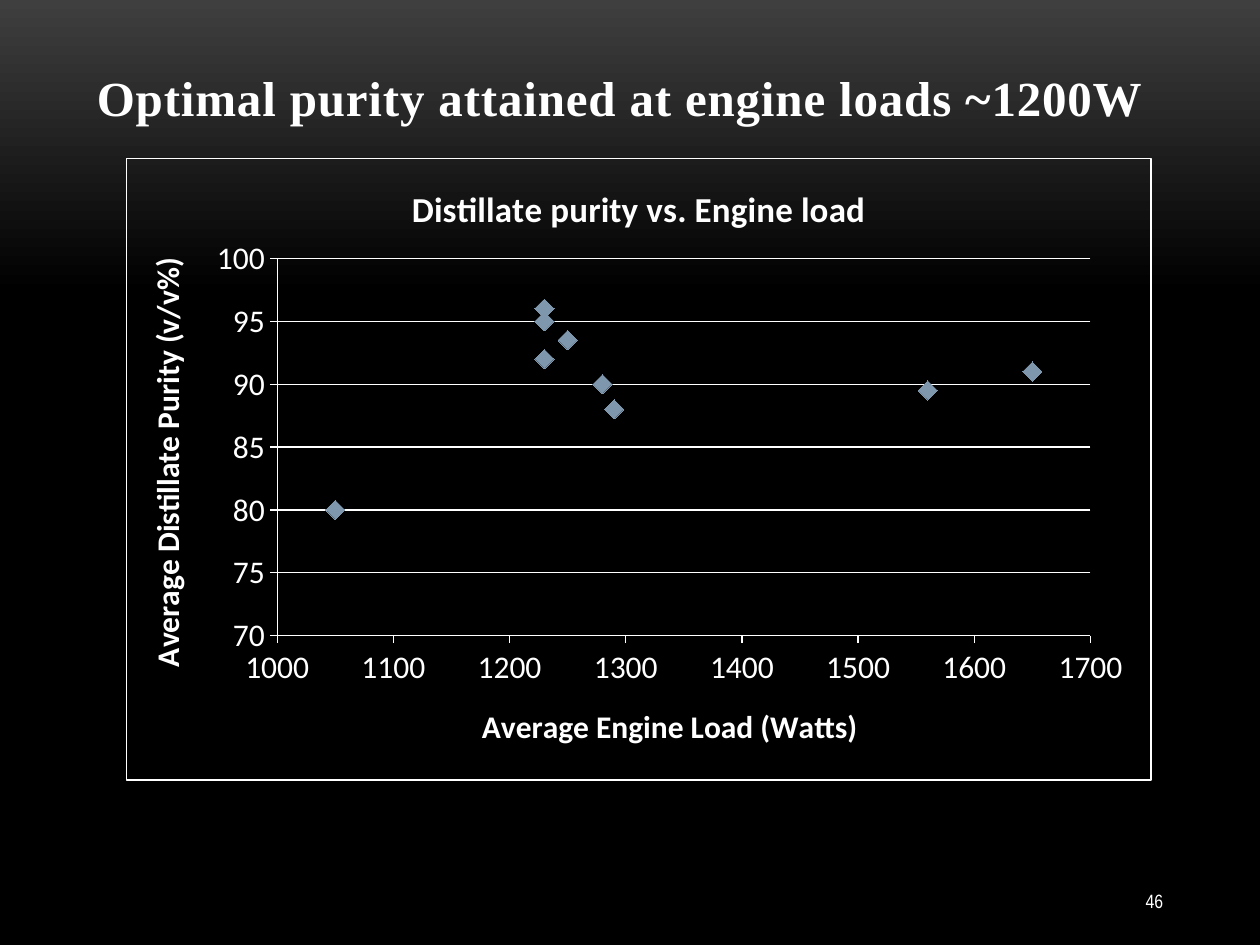
from dataclasses import dataclass

from lxml import etree
from pptx import Presentation
from pptx.chart.data import XyChartData
from pptx.dml.color import RGBColor
from pptx.enum.chart import XL_CHART_TYPE, XL_MARKER_STYLE, XL_TICK_MARK
from pptx.enum.text import MSO_ANCHOR, PP_ALIGN
from pptx.oxml import parse_xml
from pptx.oxml.ns import nsdecls, qn
from pptx.util import Inches, Pt

SCATTER = XL_CHART_TYPE.XY_SCATTER
DIAMOND = XL_MARKER_STYLE.DIAMOND
OUT, NONE = XL_TICK_MARK.OUTSIDE, XL_TICK_MARK.NONE
LEFT, RIGHT = PP_ALIGN.LEFT, PP_ALIGN.RIGHT
MIDDLE, BOTTOM = MSO_ANCHOR.MIDDLE, MSO_ANCHOR.BOTTOM

WIDE, HIGH = Inches(10), Inches(7.5)


@dataclass(frozen=True)
class Theme:
    text: str = "FFFFFF"
    glow: str = "3F3F3F"
    base: str = "000000"
    mark: str = "7E97AD"
    head_font: str = "Times New Roman"
    page_font: str = "Arial Narrow"
    plot_font: str = "Calibri"
    head: int = 28
    title: int = 20
    label: int = 18
    page: int = 11
    marker: int = 11
    line: float = 0.75


THEME = Theme()
POINTS = [(1560, 89.5), (1650, 91), (1250, 93.5), (1050, 80), (1290, 88),
          (1230, 96), (1230, 92), (1280, 90), (1230, 95)]


def rgb(code):
    return RGBColor.from_string(code)


def place(x, y, w, h):
    """Turn shares of the slide's size into lengths."""
    return int(x * WIDE), int(y * HIGH), int(w * WIDE), int(h * HIGH)


def style(font, name, size, bold=False):
    font.name, font.size, font.bold = name, Pt(size), bold
    font.color.rgb = rgb(THEME.text)


def add_back(slide):
    fill = slide.background.fill
    fill.gradient()
    fill.gradient_angle = 270
    shades = ((0, THEME.glow), (0.31, THEME.base))
    for stop, (share, code) in zip(fill.gradient_stops, shades):
        stop.position = share
        stop.color.rgb = rgb(code)


def add_text(slide, box, text, name, size, align, anchor, bold=False):
    frame = slide.shapes.add_textbox(*place(*box)).text_frame
    frame.word_wrap = True
    frame.vertical_anchor = anchor
    para = frame.paragraphs[0]
    para.text = text
    para.alignment = align
    style(para.font, name, size, bold)
    return para


def space_out(para, points):
    """Widen the gaps between letters."""
    for run in para.runs:
        run.font._element.set("spc", str(int(points * 100)))


def set_line(line):
    line.color.rgb = rgb(THEME.text)
    line.width = Pt(THEME.line)


def set_title(owner, text, size):
    frame = (owner.chart_title if hasattr(owner, "chart_title")
             else owner.axis_title).text_frame
    frame.text = text
    style(frame.paragraphs[0].font, THEME.plot_font, size, True)
    return frame


def set_axis(axis, text, low, high, step, grid):
    axis.minimum_scale, axis.maximum_scale = low, high
    axis.major_unit = step
    axis.major_tick_mark, axis.minor_tick_mark = OUT, NONE
    axis.has_major_gridlines = grid
    if grid:
        set_line(axis.major_gridlines.format.line)
    set_line(axis.format.line)
    labels = axis.tick_labels
    style(labels.font, THEME.plot_font, THEME.label)
    labels.number_format, labels.number_format_is_linked = "General", False
    return set_title(axis, text, THEME.label)


def set_plot(chart, x, y, w, h):
    """Fix the inner plot area, in shares of the chart."""
    area = chart._chartSpace.chart.plotArea
    for old in area.findall(qn("c:layout")):
        area.remove(old)
    layout = etree.Element(qn("c:layout"))
    manual = etree.SubElement(layout, qn("c:manualLayout"))
    parts = (("layoutTarget", "inner"), ("xMode", "edge"), ("yMode", "edge"),
             ("x", x), ("y", y), ("w", w), ("h", h))
    for tag, val in parts:
        etree.SubElement(manual, qn(f"c:{tag}")).set("val", str(val))
    area.insert(0, layout)


def set_frame(chart):
    """Draw a border round the whole chart."""
    chart._chartSpace.chart.addnext(parse_xml(
        f'<c:spPr {nsdecls("c", "a")}><a:noFill/>'
        f'<a:ln w="{Pt(THEME.line)}"><a:solidFill>'
        f'<a:srgbClr val="{THEME.text}"/></a:solidFill></a:ln></c:spPr>'))


def set_marks(series):
    series.format.line.fill.background()
    mark = series.marker
    mark.style, mark.size = DIAMOND, THEME.marker
    mark.format.fill.solid()
    mark.format.fill.fore_color.rgb = rgb(THEME.mark)
    mark.format.line.color.rgb = rgb(THEME.mark)


def add_scatter(slide, box):
    data = XyChartData()
    series = data.add_series("Series 1")
    for load, purity in POINTS:
        series.add_data_point(load, purity)
    chart = slide.shapes.add_chart(SCATTER, *place(*box), data).chart
    style(chart.font, THEME.page_font, THEME.label)
    chart.has_legend = False
    chart.plots[0].vary_by_categories = False
    set_title(chart, "Distillate purity vs. Engine load", THEME.title)
    chart.chart_title.include_in_layout = False
    set_axis(chart.category_axis, "Average Engine Load (Watts)",
             1000, 1700, 100, False)
    side = set_axis(chart.value_axis, "Average Distillate Purity (v/v%)",
                    70, 100, 5, True)
    side._txBody.find(qn("a:bodyPr")).set("rot", "-5400000")
    set_marks(chart.plots[0].series[0])
    chart.plots[0].series[0].smooth = False
    set_plot(chart, 0.147, 0.161, 0.794, 0.607)
    set_frame(chart)


def main():
    deck = Presentation()
    deck.slide_width, deck.slide_height = WIDE, HIGH
    slide = deck.slides.add_slide(deck.slide_layouts[6])
    add_back(slide)
    add_text(slide, (0.825, 0.927, 0.108, 0.053), "46",
             THEME.page_font, THEME.page, RIGHT, MIDDLE)
    add_scatter(slide, (0.1, 0.167, 0.814, 0.659))
    head = add_text(slide, (0.067, 0.044, 0.888, 0.096),
                    "Optimal purity attained at engine loads ~1200W",
                    THEME.head_font, THEME.head, LEFT, BOTTOM, True)
    space_out(head, 0.5)
    deck.save("out.pptx")


if __name__ == "__main__":
    main()
